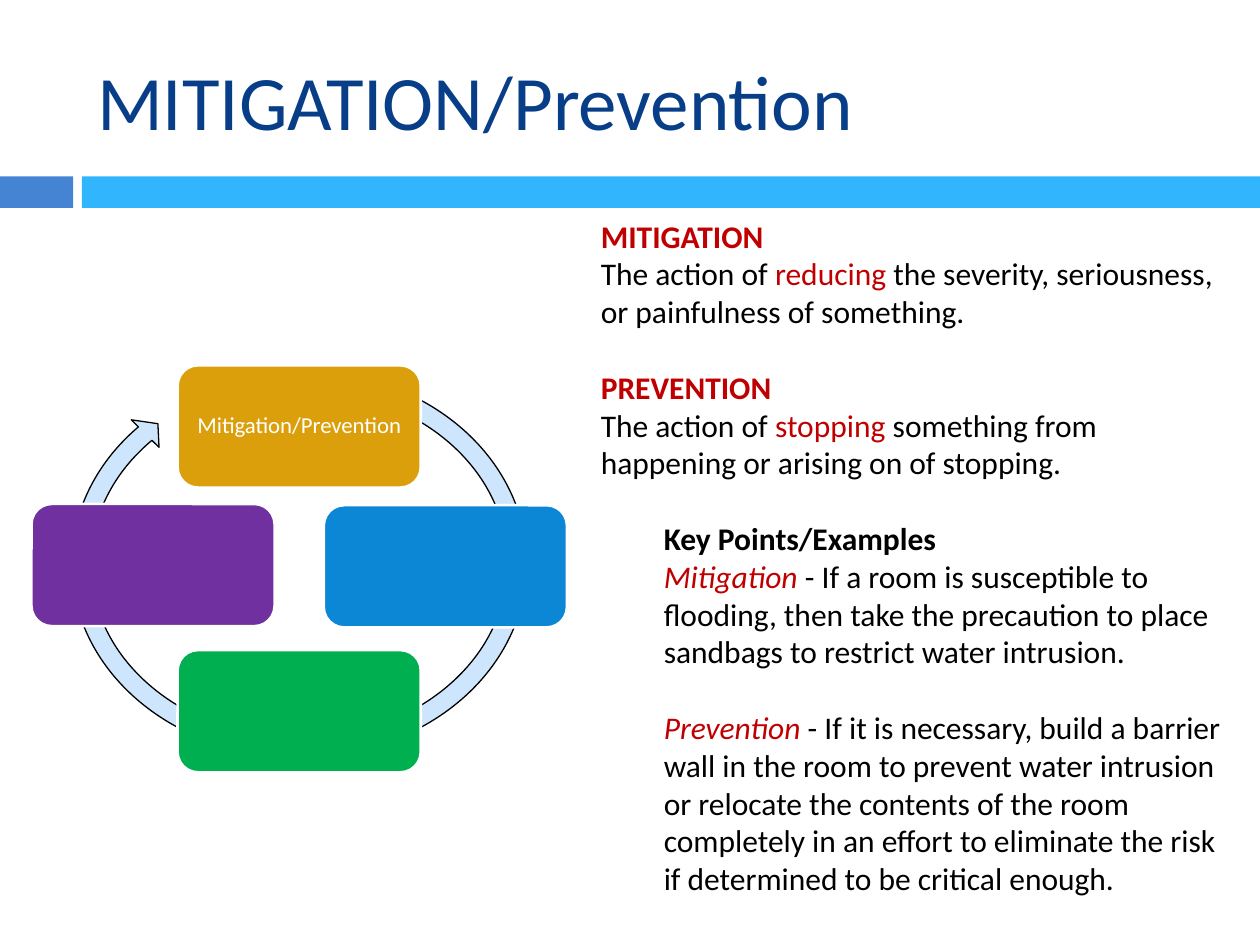
from pptx import Presentation
from pptx.dml.color import RGBColor
from pptx.enum.shapes import MSO_SHAPE as Kind
from pptx.enum.text import MSO_ANCHOR as Anchor, MSO_AUTO_SIZE as Fit, PP_ALIGN as Align
from pptx.util import Inches, Pt

FONT = "Calibri"
GAP = Pt(21.6)
HEX = {
    "title": "073E87", "dark": "4584D3", "light": "31B6FD", "ring": "CEE5FE",
    "gold": "DC9F0C", "blue": "0B87D6", "green": "00B050", "purple": "7030A0",
    "red": "C00000", "black": "000000", "white": "FFFFFF",
}
# Left, top, colour and label of each stage, in the order of the cycle
STAGES = [
    (1.41, 2.9, "gold", "Mitigation/Prevention"),
    (2.57, 4.01, "blue", ""),
    (1.41, 5.16, "green", ""),
    (0.25, 4, "purple", ""),
]
# Level, gap before, and runs of (text, colour, style)
NOTES = [
    (0, 0, [("MITIGATION", "red", "b")]),
    (0, 0, [("The action of ", "black", ""), ("reducing", "red", ""),
            (" the severity, seriousness, or painfulness of something.", "black", "")]),
    (0, GAP, [("PREVENTION", "red", "b")]),
    (0, 0, [("The action of ", "black", ""), ("stopping ", "red", ""),
            ("something from happening or arising on of stopping.", "black", "")]),
    (1, GAP, [("Key Points/Examples", "black", "b")]),
    (1, 0, [("Mitigation", "red", "i"),
            (" - If a room is susceptible to flooding, then take the precaution "
             "to place sandbags to restrict water intrusion.", "black", "")]),
    (1, GAP, [("Prevention", "red", "i"),
              (" - If it is necessary, build a barrier wall in the room to prevent "
               "water intrusion or relocate the contents of the room completely in "
               "an effort to eliminate the risk if determined to be critical enough.",
               "black", "")]),
]


def color(name):
    return RGBColor.from_string(HEX[name])


def add_run(para, text, size, tint, style=""):
    run = para.add_run()
    run.text = text
    font = run.font
    font.name, font.size = FONT, Pt(size)
    font.bold, font.italic = "b" in style, "i" in style
    font.color.rgb = color(tint)


def add_shape(slide, kind, box, fill, line=None, width=0):
    shape = slide.shapes.add_shape(kind, *map(Inches, box))
    shape.shadow.inherit = False
    shape.fill.solid()
    shape.fill.fore_color.rgb = color(fill)
    if line:
        shape.line.color.rgb = color(line)
        shape.line.width = Pt(width)
    else:
        shape.line.fill.background()
    return shape


def add_title(slide, text):
    title = slide.shapes.title
    title.left, title.top, title.width, title.height = map(Inches, (0.67, 0.25, 8.92, 1.08))
    title.text_frame.vertical_anchor = Anchor.MIDDLE
    para = title.text_frame.paragraphs[0]
    para.alignment = Align.LEFT
    add_run(para, text, 44, "title")


def add_stage(slide, left, top, fill, label):
    shape = add_shape(slide, Kind.ROUNDED_RECTANGLE, (left, top, 1.93, 0.97),
                      fill, "white", 1.5)
    if not label:
        return
    frame = shape.text_frame
    frame.margin_left = frame.margin_right = Inches(0.05)
    frame.margin_top = frame.margin_bottom = Inches(0.05)
    frame.vertical_anchor = Anchor.MIDDLE
    para = frame.paragraphs[0]
    para.alignment = Align.CENTER
    para.line_spacing = 0.9
    add_run(para, label, 13, "white")


def add_cycle(slide):
    ring = add_shape(slide, Kind.CIRCULAR_ARROW, (0.49, 2.86, 3.77, 3.23),
                     "ring", "black", 0.75)
    # Band width, head angle, end angle, start angle, head width
    for i, value in enumerate((0.047, 2.73, 132.12, 177.77, 0.048)):
        ring.adjustments[i] = value
    for stage in STAGES:
        add_stage(slide, *stage)


def add_notes(slide):
    box = slide.shapes.add_textbox(*map(Inches, (4.67, 1.67, 5.17, 5.55)))
    frame = box.text_frame
    frame.word_wrap = True
    frame.auto_size = Fit.SHAPE_TO_FIT_TEXT
    for i, (level, gap, runs) in enumerate(NOTES):
        para = frame.add_paragraph() if i else frame.paragraphs[0]
        para.level = level
        para.space_before = gap
        for text, tint, style in runs:
            add_run(para, text, 18, tint, style)


def main():
    deck = Presentation()
    deck.slide_width, deck.slide_height = Inches(10), Inches(7.5)
    slide = deck.slides.add_slide(deck.slide_layouts[5])
    add_shape(slide, Kind.RECTANGLE, (0, 1.4, 0.58, 0.25), "dark")
    add_shape(slide, Kind.RECTANGLE, (0.65, 1.4, 9.35, 0.25), "light")
    add_title(slide, "MITIGATION/Prevention")
    add_cycle(slide)
    add_notes(slide)
    deck.save("out.pptx")


if __name__ == "__main__":
    main()
